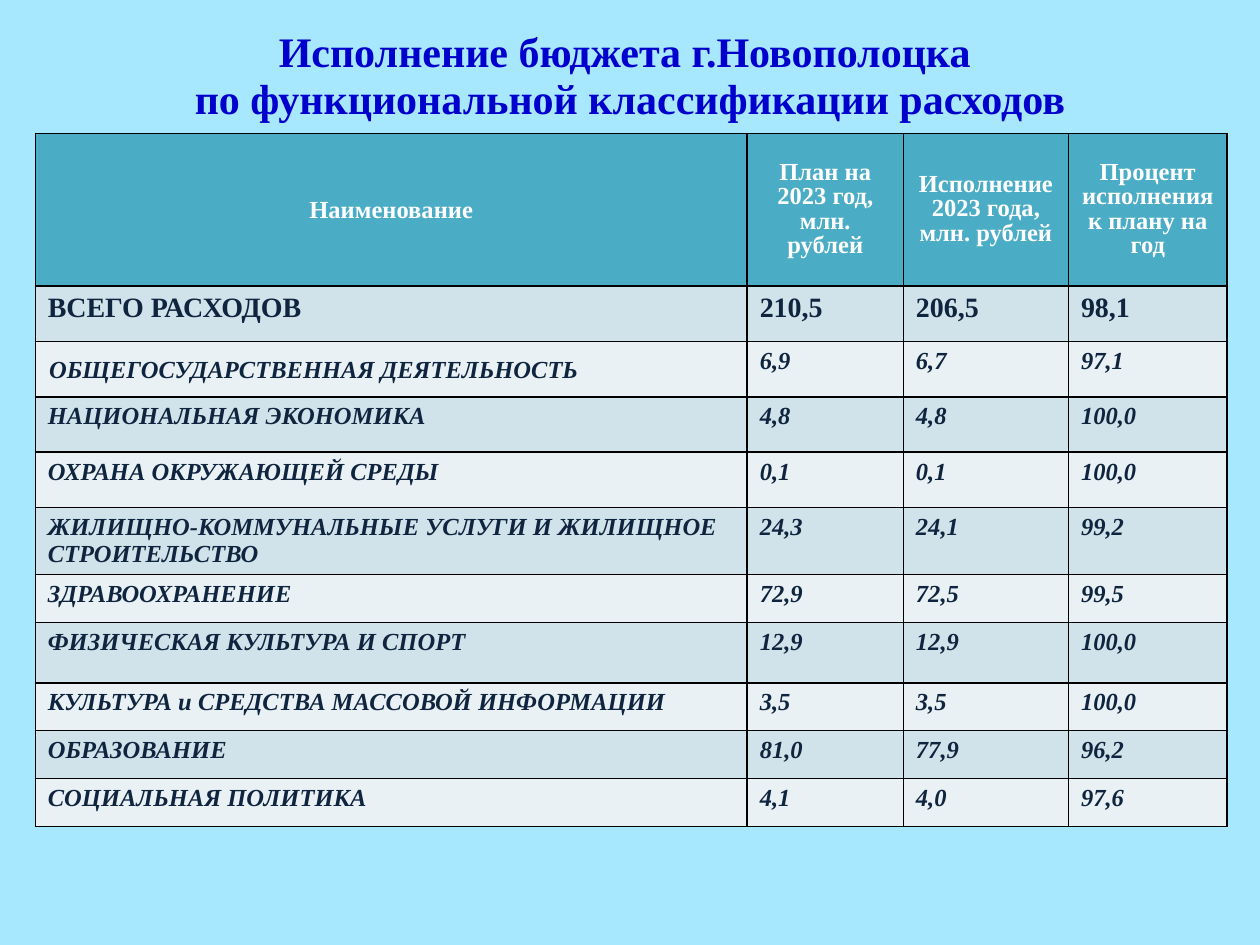
import lxml.etree
import pptx
import pptx.dml.color
import pptx.enum.text
import pptx.oxml.ns
import pptx.util

Inches, Pt = pptx.util.Inches, pptx.util.Pt
PP_ALIGN = pptx.enum.text.PP_ALIGN
MIDDLE = pptx.enum.text.MSO_ANCHOR.MIDDLE

HEADINGS = ["Наименование", "План на 2023 год, млн. рублей",
            "Исполнение 2023 года, млн. рублей", "Процент исполнения к плану на год"]
EXPENSES = [
    ("ВСЕГО РАСХОДОВ", "210,5", "206,5", "98,1"),
    ("ОБЩЕГОСУДАРСТВЕННАЯ ДЕЯТЕЛЬНОСТЬ", "6,9", "6,7", "97,1"),
    ("НАЦИОНАЛЬНАЯ ЭКОНОМИКА", "4,8", "4,8", "100,0"),
    ("ОХРАНА ОКРУЖАЮЩЕЙ СРЕДЫ", "0,1", "0,1", "100,0"),
    ("ЖИЛИЩНО-КОММУНАЛЬНЫЕ УСЛУГИ И ЖИЛИЩНОЕ СТРОИТЕЛЬСТВО", "24,3", "24,1", "99,2"),
    ("ЗДРАВООХРАНЕНИЕ", "72,9", "72,5", "99,5"),
    ("ФИЗИЧЕСКАЯ КУЛЬТУРА И СПОРТ", "12,9", "12,9", "100,0"),
    ("КУЛЬТУРА и СРЕДСТВА МАССОВОЙ ИНФОРМАЦИИ", "3,5", "3,5", "100,0"),
    ("ОБРАЗОВАНИЕ", "81,0", "77,9", "96,2"),
    ("СОЦИАЛЬНАЯ ПОЛИТИКА", "4,1", "4,0", "97,6"),
]
COLUMN_WIDTHS = [5.65, 1.24, 1.31, 1.26]
ROW_HEIGHTS = [1.21] + [0.44] * 5 + [0.38, 0.48] + [0.38] * 3


def colour(hex_string):
    return pptx.dml.color.RGBColor.from_string(hex_string)


class BudgetSlide:
    FONT = "Times New Roman"
    BACKGROUND, TITLE, INK, BORDER = "A7E8FF", "0000CC", "0F243E", "000000"
    HEADER, HEADER_TEXT = "4BACC6", "FFFFFF"
    BANDS = ["D0E3EA", "E9F1F5"]

    def __init__(self, presentation):
        self.width, self.height = presentation.slide_width, presentation.slide_height
        self.slide = presentation.slides.add_slide(presentation.slide_layouts[5])
        background = self.slide.background.fill
        background.solid()
        background.fore_color.rgb = colour(self.BACKGROUND)

    def box(self, left, top, width, height):
        """Turn shares of the slide into lengths."""
        return (int(left * self.width), int(top * self.height),
                int(width * self.width), int(height * self.height))

    def set_text(self, frame, text, size, ink, italic=False, align=PP_ALIGN.LEFT, spacing=None):
        frame.text = text
        for paragraph in frame.paragraphs:
            paragraph.alignment = align
            if spacing:
                paragraph.line_spacing = Pt(spacing)
            for run in paragraph.runs:
                font = run.font
                font.name, font.size = self.FONT, Pt(size)
                font.bold, font.italic = True, italic
                font.color.rgb = colour(ink)

    def title(self, text, *shares):
        title = self.slide.shapes.title
        title.left, title.top, title.width, title.height = self.box(*shares)
        frame = title.text_frame
        frame.word_wrap = True
        frame.auto_size = pptx.enum.text.MSO_AUTO_SIZE.NONE
        frame.vertical_anchor = MIDDLE
        self.set_text(frame, text, 24, self.TITLE, align=PP_ALIGN.CENTER, spacing=27)

    def paint(self, cell, fill):
        """Give the cell its borders and fill."""
        properties = cell._tc.get_or_add_tcPr()
        qn = pptx.oxml.ns.qn
        for side in ("lnL", "lnR", "lnT", "lnB"):
            line = lxml.etree.SubElement(properties, qn(f"a:{side}"), w=str(Pt(1)))
            solid = lxml.etree.SubElement(line, qn("a:solidFill"))
            lxml.etree.SubElement(solid, qn("a:srgbClr"), val=self.BORDER)
        cell.fill.solid()
        cell.fill.fore_color.rgb = colour(fill)

    def table(self, headings, records, widths, heights, *shares):
        table = self.slide.shapes.add_table(
            len(records) + 1, len(headings), *self.box(*shares)).table
        table.first_row = table.horz_banding = False
        for column, width in zip(table.columns, widths):
            column.width = Inches(width)
        for row, height in zip(table.rows, heights):
            row.height = Inches(height)
        for column, heading in enumerate(headings):
            cell = table.cell(0, column)
            self.paint(cell, self.HEADER)
            cell.vertical_anchor = MIDDLE
            self.set_text(cell.text_frame, heading, 14, self.HEADER_TEXT,
                          align=PP_ALIGN.CENTER, spacing=14 if column else None)
        for index, record in enumerate(records):
            is_total = index == 0
            for column, text in enumerate(record):
                cell = table.cell(index + 1, column)
                self.paint(cell, self.BANDS[index % 2])
                self.set_text(cell.text_frame, text, 16 if is_total else 14,
                              self.INK, italic=not is_total)
        return table


def main():
    presentation = pptx.Presentation()
    presentation.slide_width, presentation.slide_height = Inches(10), Inches(7.5)
    budget = BudgetSlide(presentation)
    budget.title("Исполнение бюджета г.Новополоцка \vпо функциональной классификации расходов",
                 0.05, 0.02, 0.9, 0.12)
    table = budget.table(HEADINGS, EXPENSES, COLUMN_WIDTHS, ROW_HEIGHTS,
                         0.028, 1.06 / 7.5, 0.946, 5.41 / 7.5)
    state_activity = table.cell(2, 0)
    state_activity.vertical_anchor = MIDDLE
    state_activity.margin_left = Inches(0.11)
    state_activity.margin_top = state_activity.margin_right = Inches(0.01)
    state_activity.margin_bottom = 0
    presentation.save("out.pptx")


if __name__ == "__main__":
    main()
